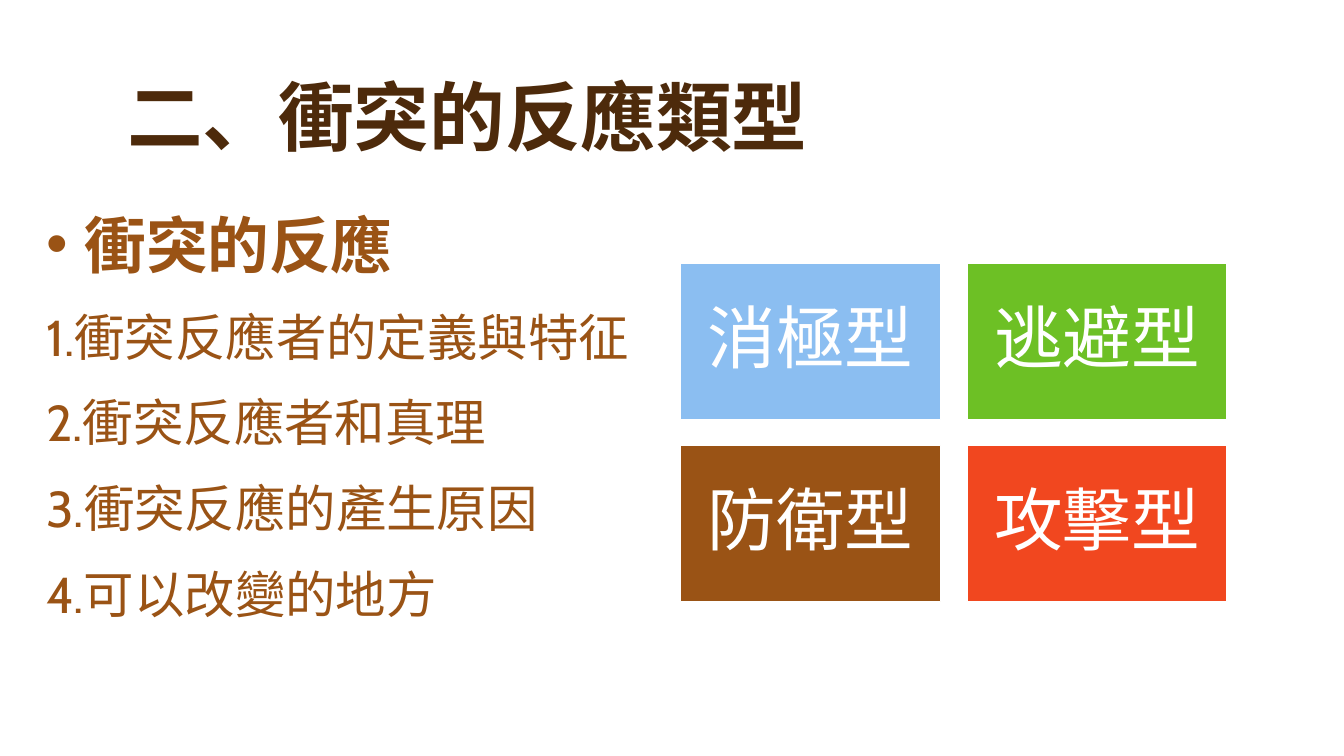
from lxml.etree import SubElement
from pptx import Presentation
from pptx.dml.color import RGBColor
from pptx.enum.shapes import MSO_SHAPE
from pptx.enum.text import MSO_ANCHOR, PP_ALIGN
from pptx.oxml.ns import qn
from pptx.util import Inches, Pt

HEX = {"title": "4D2A0B", "brown": "9A5315", "blue": "8BBEF1",
       "green": "6DC025", "red": "F1471F", "white": "FFFFFF"}


def color(name):
    return RGBColor.from_string(HEX[name])


def style(para, size, name, bold=False):
    para.font.name = "Cabin"
    para.font.size = Pt(size)
    para.font.bold = bold
    para.font.color.rgb = color(name)


deck = Presentation()
deck.slide_width, deck.slide_height = Inches(13.33), Inches(7.5)
slide = deck.slides.add_slide(deck.slide_layouts[5])

# Title
title = slide.shapes.title
title.left, title.top = Inches(1.16), Inches(0.33)
title.width, title.height = Inches(11), Inches(1.33)
title.text_frame.text = "二、衝突的反應類型"
title.text_frame.vertical_anchor = MSO_ANCHOR.BOTTOM
head = title.text_frame.paragraphs[0]
head.alignment = PP_ALIGN.LEFT
head.line_spacing = 0.9
style(head, 54, "title", True)

# Outline: a bulleted heading and four points
box = slide.shapes.add_textbox(Inches(0.36), Inches(2), Inches(6.22), Inches(4.58))
frame = box.text_frame
frame.word_wrap = True
lead = frame.paragraphs[0]
lead.text = "衝突的反應"
props = lead._p.get_or_add_pPr()
props.set("marL", str(Inches(0.38)))
props.set("indent", str(Inches(-0.38)))
SubElement(props, qn("a:buFont"), typeface="Arial")
SubElement(props, qn("a:buChar"), char="•")
style(lead, 44, "brown", True)

points = ["衝突反應者的定義與特征", "衝突反應者和真理", "衝突反應的產生原因", "可以改變的地方"]
for num, point in enumerate(points, 1):
    para = frame.add_paragraph()
    para.text = f"{num}.{point}"
    para.space_before = Pt(18)
    style(para, 36, "brown")

# Two-by-two grid of reaction types
types = [("消極型", "blue"), ("逃避型", "green"), ("防衛型", "brown"), ("攻擊型", "red")]
for i, (label, fill) in enumerate(types):
    row, col = divmod(i, 2)
    tile = slide.shapes.add_shape(
        MSO_SHAPE.RECTANGLE, Inches(6.75 + 2.84 * col), Inches(2.61 + 1.81 * row),
        Inches(2.58), Inches(1.55))
    tile.shadow.inherit = False
    tile.fill.solid()
    tile.fill.fore_color.rgb = color(fill)
    tile.line.color.rgb = color("white")
    tile.line.width = Pt(1)
    frame = tile.text_frame
    frame.margin_left = frame.margin_right = Inches(0.2)
    frame.margin_top = frame.margin_bottom = Inches(0.2)
    frame.vertical_anchor = MSO_ANCHOR.MIDDLE
    frame.text = label
    para = frame.paragraphs[0]
    para.alignment = PP_ALIGN.CENTER
    para.line_spacing = 0.9
    style(para, 49, "white")

deck.save("out.pptx")
